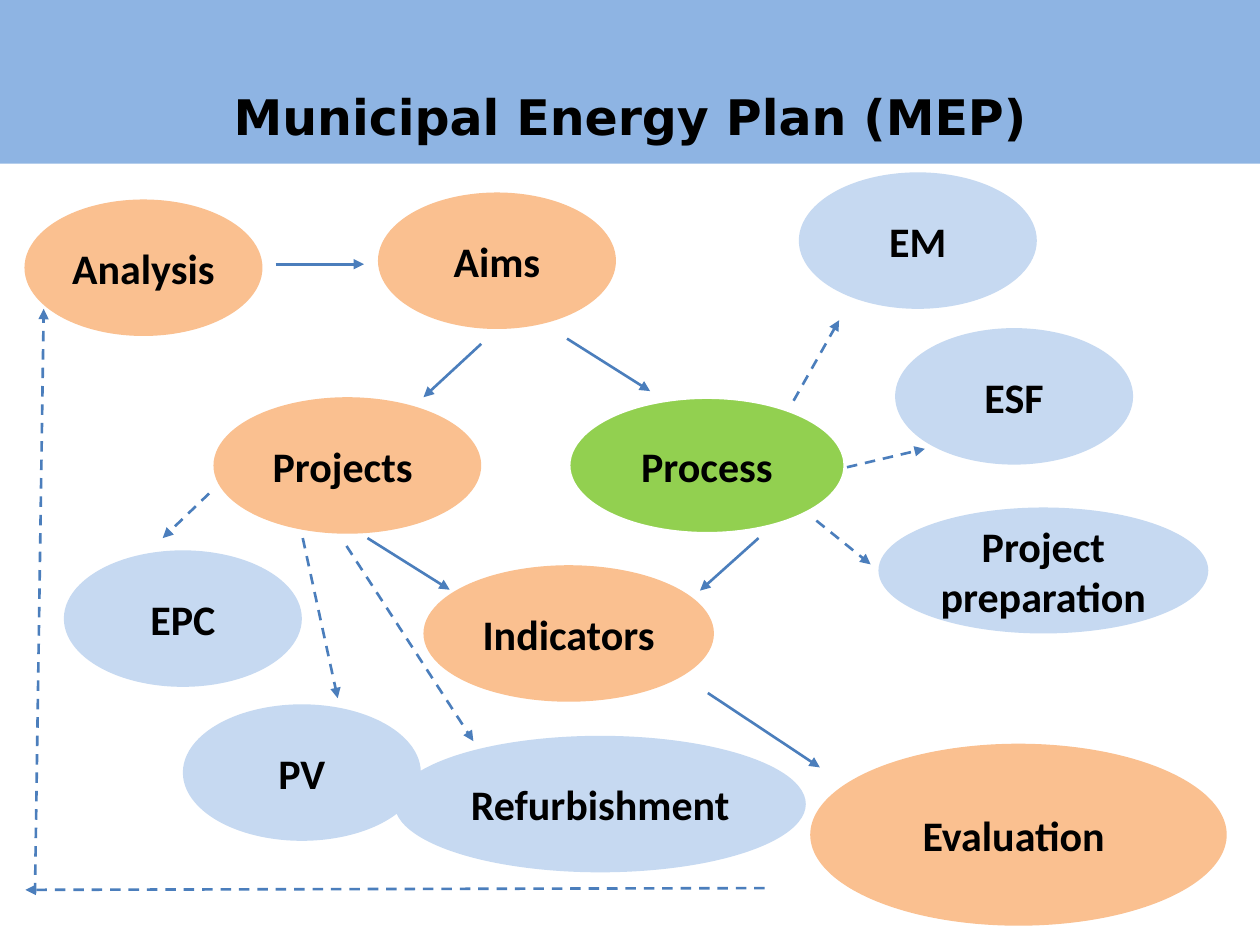
import dataclasses

import pptx
import pptx.dml.color
import pptx.enum.dml
import pptx.enum.shapes
import pptx.enum.text
import pptx.oxml
import pptx.oxml.ns
import pptx.util

Pt = pptx.util.Pt
SHAPE = pptx.enum.shapes.MSO_SHAPE
ANCHOR = pptx.enum.text.MSO_ANCHOR
NAMESPACE = pptx.oxml.ns.nsdecls("a")


@dataclasses.dataclass(frozen=True)
class Theme:
    band: str = "8EB4E3"
    step: str = "FAC090"
    process: str = "92D050"
    measure: str = "C6D9F1"
    arrow: str = "4B7EBC"
    outline: str = "FFFFFF"
    text: str = "000000"
    title_font: str = "DejaVu Sans"
    body_font: str = "Calibri"
    title_size: int = 28
    body_size: int = 24
    arrow_width: float = 1.5
    outline_width: float = 2


THEME = Theme()
WIDTH, HEIGHT = 720, 540
OVAL_SIZE = (136, 78)

# Ovals: text, left, top, width, height
STEPS = [
    ("Aims", 216, 110, *OVAL_SIZE),
    ("Projects ", 122, 227, 153, 78),
    ("Indicators", 242, 323, 166, 78),
    ("Evaluation ", 463, 425, 238, 104),
    ("Analysis", 14, 114, *OVAL_SIZE),
]
PROCESS = ("Process", 325, 227, 158, 78)
MEASURES = [
    ("EPC", 36.5, 314.5, *OVAL_SIZE),
    ("PV", 104.5, 402.5, *OVAL_SIZE),
    ("Refurbishment", 225.5, 420.5, 235, 78),
    ("EM", 456.5, 98.5, *OVAL_SIZE),
    ("ESF", 511.5, 187.5, *OVAL_SIZE),
    ("Project preparation", 502, 290, 188.5, 72),
]

# Arrows: start x, start y, end x, end y
MAIN_ARROWS = [
    (157.5, 151, 208, 151),      # Analysis to Aims
    (275, 196.5, 242, 227),      # Aims to Projects
    (324, 193.5, 371.5, 223.5),  # Aims to Process
    (433.5, 307.5, 400, 337.5),  # Process to Indicators
    (210, 307.5, 257, 337),      # Projects to Indicators
    (404.5, 396, 468.5, 438.5),  # Indicators to Evaluation
]
DASHED_ARROWS = [
    (453.5, 229, 479.5, 183),    # Process to EM
    (484, 267, 528.5, 256.5),    # Process to ESF
    (466.5, 297.5, 497.5, 322.5),  # Process to Project preparation
    (119.5, 282, 93, 307.5),     # Projects to EPC
    (173, 307.5, 193, 399),      # Projects to PV
    (198, 312, 270.5, 423.5),    # Projects to Refurbishment
    (437, 507.5, 14.5, 508.5),   # Evaluation back to the left edge
    (20, 510.5, 25, 176.5),      # Left edge up to Analysis
]


def color(value):
    return pptx.dml.color.RGBColor.from_string(value)


def set_values(target, values):
    for name, value in values.items():
        setattr(target, name, value)


def add_box(page, kind, text, bounds, fill, font, size, frame_values=None, spacing=None):
    box = page.shapes.add_shape(kind, *map(Pt, bounds))
    box.shadow.inherit = False
    box.fill.solid()
    box.fill.fore_color.rgb = color(fill)
    box.line.fill.background()
    frame = box.text_frame
    set_values(frame, {"word_wrap": True, "vertical_anchor": ANCHOR.MIDDLE,
                       **(frame_values or {})})
    para = frame.paragraphs[0]
    para.alignment = pptx.enum.text.PP_ALIGN.CENTER
    if spacing:
        para.line_spacing = spacing
    span = para.add_run()
    span.text = text
    set_values(span.font, {"name": font, "size": Pt(size), "bold": True})
    span.font.color.rgb = color(THEME.text)
    return box


def add_title(page, text):
    add_box(page, SHAPE.RECTANGLE, text, (0, -2, WIDTH, 95.5), THEME.band,
            THEME.title_font, THEME.title_size,
            {"vertical_anchor": ANCHOR.BOTTOM, "margin_bottom": Pt(10)}, 0.9)


def add_oval(page, text, *bounds, fill):
    return add_box(page, SHAPE.OVAL, text, bounds, fill, THEME.body_font, THEME.body_size)


def add_arrow(page, points, dashed=False):
    arrow = page.shapes.add_connector(
        pptx.enum.shapes.MSO_CONNECTOR.STRAIGHT, *map(Pt, points))
    arrow.line.color.rgb = color(THEME.arrow)
    arrow.line.width = Pt(THEME.arrow_width)
    if dashed:
        arrow.line.dash_style = pptx.enum.dml.MSO_LINE.DASH
    properties = arrow.element.spPr
    properties.find(pptx.oxml.ns.qn("a:ln")).append(
        pptx.oxml.parse_xml(f'<a:tailEnd {NAMESPACE} type="triangle"/>'))
    properties.append(pptx.oxml.parse_xml(f"<a:effectLst {NAMESPACE}/>"))


def main():
    deck = pptx.Presentation()
    set_values(deck, {"slide_width": Pt(WIDTH), "slide_height": Pt(HEIGHT)})
    page = deck.slides.add_slide(deck.slide_layouts[6])

    add_title(page, "Municipal Energy Plan (MEP)")

    # Planning steps, with the process highlighted
    for step in STEPS:
        add_oval(page, *step, fill=THEME.step)
    process = add_oval(page, *PROCESS, fill=THEME.process)
    process.line.color.rgb = color(THEME.outline)
    process.line.width = Pt(THEME.outline_width)

    # Measures that belong to projects and process
    for measure in MEASURES:
        add_oval(page, *measure, fill=THEME.measure)

    # Flow
    for points in MAIN_ARROWS:
        add_arrow(page, points)
    for points in DASHED_ARROWS:
        add_arrow(page, points, dashed=True)

    deck.save("out.pptx")


if __name__ == "__main__":
    main()
